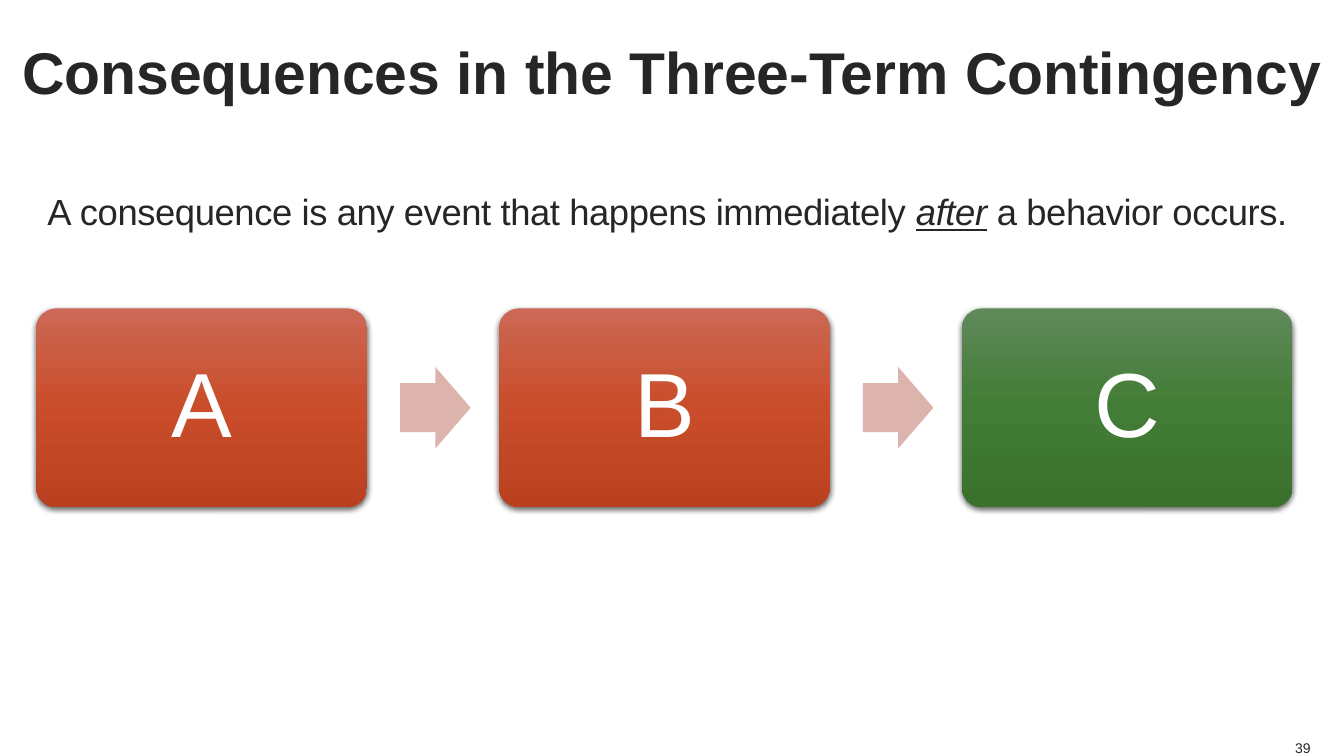
import copy

import lxml.etree
import pptx
import pptx.dml.color
import pptx.enum.shapes
import pptx.enum.text
import pptx.oxml.ns
import pptx.util

Inches, Pt, qn = pptx.util.Inches, pptx.util.Pt, pptx.oxml.ns.qn
ALIGN, ANCHOR = pptx.enum.text.PP_ALIGN, pptx.enum.text.MSO_ANCHOR
SHAPE = pptx.enum.shapes.MSO_SHAPE
WIDTH, HEIGHT = 13.33, 7.5
COLORS = {
    "ink": "262626", "white": "FFFFFF", "arrow": "DDB3AE", "shadow": "000000",
    "red": ("CC6855", "C94D2A", "B9411F"), "green": ("60895A", "427C36", "39712D"),
}
TERMS = [("A", "red"), ("B", "red"), ("C", "green")]
DEFINITION = [
    ("A ", {}, None),
    ("consequence is any event that happens immediately ", {}, "-30"),
    ("after", {"italic": True, "underline": True}, "-30"),
    (" a behavior occurs.", {}, "-30"),
]


def rgb(value):
    """Return the colour for a hex string."""
    return pptx.dml.color.RGBColor.from_string(value)


def write_text(shape, runs, size, color="ink", align=ALIGN.CENTER, spacing=1.0, bold=False, **frame_format):
    """Fill the shape with one paragraph of formatted runs."""
    frame = shape.text_frame
    margins = dict.fromkeys(("margin_left", "margin_top", "margin_right", "margin_bottom"), 0)
    for name, value in {**margins, "word_wrap": True, **frame_format}.items():
        setattr(frame, name, value)
    paragraph = frame.paragraphs[0]
    paragraph.alignment, paragraph.line_spacing = align, spacing
    for text, styles, tracking in runs:
        run = paragraph.add_run()
        run.text = text
        for name, value in {"name": "Arial", "size": Pt(size), "bold": bold, **styles}.items():
            setattr(run.font, name, value)
        run.font.color.rgb = rgb(COLORS[color])
        if tracking:
            run.font._element.set("spc", tracking)


def add_text(slide, box, runs, size, **text_format):
    """Place a text box in the given box."""
    write_text(slide.shapes.add_textbox(*map(Inches, box)), runs, size, **text_format)


def fill_gradient(shape, colors):
    """Shade the shape from top to bottom through evenly spaced colours."""
    shape.fill.gradient()
    shape.fill.gradient_angle = 270
    stops = shape._element.spPr.find(qn("a:gradFill")).find(qn("a:gsLst"))
    stops.insert(1, copy.deepcopy(stops[0]))
    for index, stop in enumerate(shape.fill.gradient_stops):
        stop.position = index / (len(colors) - 1)
        stop.color.rgb = rgb(colors[index])


def add_shadow(shape):
    """Give the shape a soft shadow below it."""
    effects = shape._element.spPr.find(qn("a:effectLst"))
    shadow = lxml.etree.SubElement(
        effects, qn("a:outerShdw"), blurRad=str(Pt(4.5)), dist=str(Pt(1.5)),
        dir="5400000", algn="ctr", rotWithShape="0")
    color = lxml.etree.SubElement(shadow, qn("a:srgbClr"), val=COLORS["shadow"])
    lxml.etree.SubElement(color, qn("a:alpha"), val="63000")


def add_plain_shape(slide, kind, box, adjustments):
    """Add a preset shape without line or shadow."""
    shape = slide.shapes.add_shape(kind, *map(Inches, box))
    shape.shadow.inherit = False
    shape.line.fill.background()
    for index, value in enumerate(adjustments):
        shape.adjustments[index] = value
    return shape


def add_contingency(slide, box):
    """Draw the term cards in equal columns with an arrow in each gap."""
    left, top, width, height = box
    card_width, arrow_width, arrow_height = 3.28, 0.7, 0.81
    pitch = (width - card_width) / (len(TERMS) - 1)
    for index, (letter, color) in enumerate(TERMS):
        card_left = left + index * pitch
        card = add_plain_shape(slide, SHAPE.ROUNDED_RECTANGLE, (card_left, top, card_width, height), [0.1])
        fill_gradient(card, COLORS[color])
        add_shadow(card)
        write_text(card, [(letter, {}, None)], 65, color="white", spacing=0.9,
                   vertical_anchor=ANCHOR.MIDDLE)
        if index < len(TERMS) - 1:
            arrow_box = (card_left + card_width * 1.1, top + (height - arrow_height) / 2,
                         arrow_width, arrow_height)
            arrow = add_plain_shape(slide, SHAPE.RIGHT_ARROW, arrow_box, [0.6, 0.5])
            arrow.fill.solid()
            arrow.fill.fore_color.rgb = rgb(COLORS["arrow"])


def build_slide(presentation):
    """Lay out the title, definition, contingency and page number."""
    slide = presentation.slides.add_slide(presentation.slide_layouts[6])
    add_text(slide, (0, 0, WIDTH, 1.4), [("Consequences in the Three-Term Contingency", {}, None)],
             42, bold=True, vertical_anchor=ANCHOR.MIDDLE)
    add_text(slide, (0.35, 1.77, 12.54, 1.3), DEFINITION, 26, spacing=1.25)
    add_contingency(slide, (0.36, 3.06, 12.46, 1.97))
    add_text(slide, (WIDTH - 0.5, HEIGHT - 0.17, 0.17, 0.17), [("39", {}, None)], 10,
             align=ALIGN.RIGHT, vertical_anchor=ANCHOR.BOTTOM, word_wrap=False)


def main():
    """Build and save the presentation."""
    presentation = pptx.Presentation()
    presentation.slide_width, presentation.slide_height = Inches(WIDTH), Inches(HEIGHT)
    build_slide(presentation)
    presentation.save("out.pptx")


if __name__ == "__main__":
    main()
